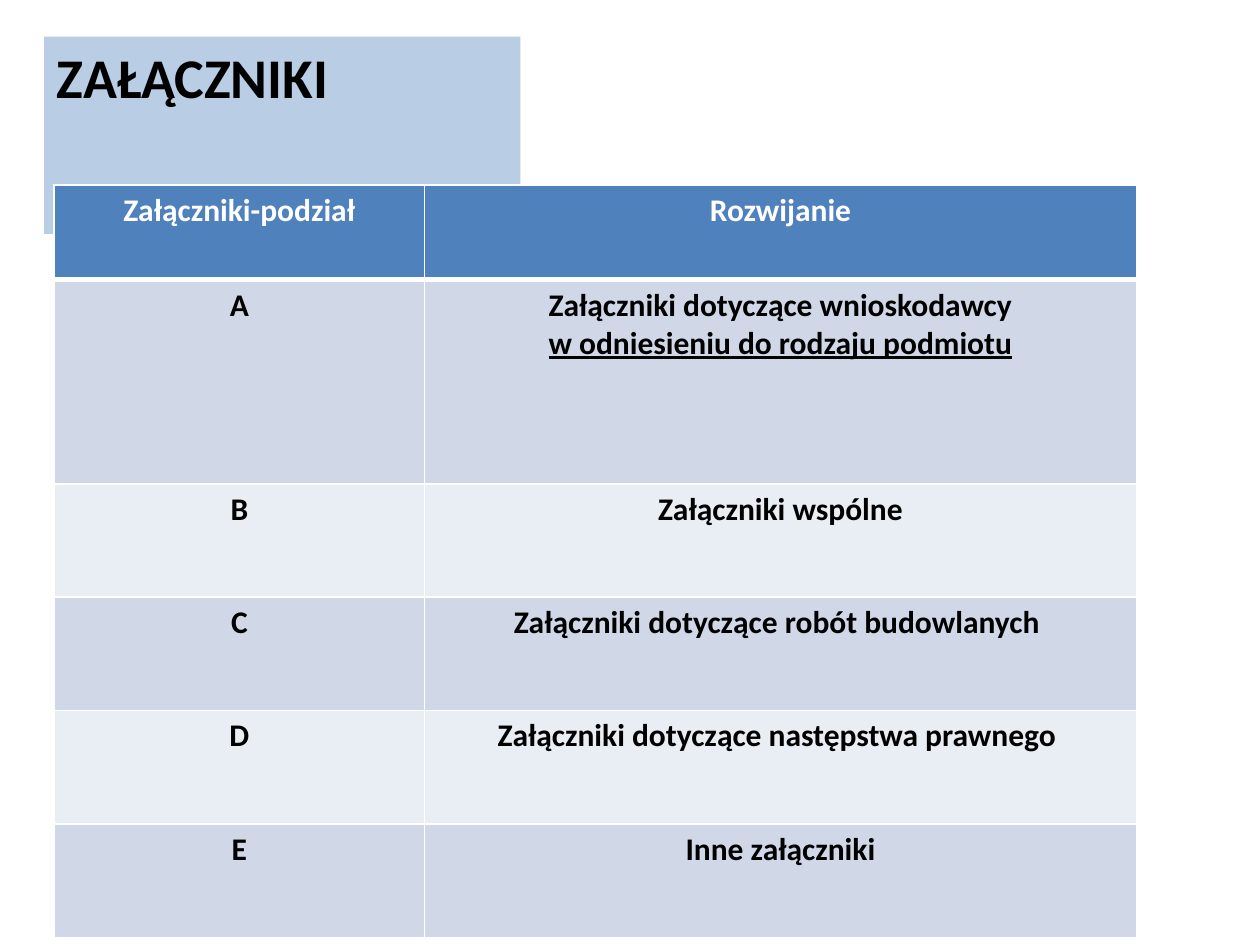
"""Build the slide listing the attachment groups."""
from typing import NamedTuple

import lxml.etree
import pptx
import pptx.dml.color
import pptx.enum.text
import pptx.oxml.ns
import pptx.util
from pptx.util import Inches


class Row(NamedTuple):
    height: float
    label: str
    lines: list[str]
    fill: str
    color: str = "000000"


DARK, LIGHT = "D0D8E8", "E9EDF4"
COLUMNS = [2.94, 5.65]
ROWS = [
    Row(0.75, "Załączniki-podział", ["Rozwijanie"], "4F81BD", "FFFFFF"),
    Row(1.62, "A", ["Załączniki dotyczące wnioskodawcy", "w odniesieniu do rodzaju podmiotu"], DARK),
    Row(0.9, "B", ["Załączniki wspólne"], LIGHT),
    Row(0.9, "C", ["Załączniki dotyczące robót budowlanych "], DARK),
    Row(0.9, "D", ["Załączniki dotyczące następstwa prawnego "], LIGHT),
    Row(0.9, "E", ["Inne załączniki"], DARK),
]


def rgb(color: str) -> pptx.dml.color.RGBColor:
    return pptx.dml.color.RGBColor.from_string(color)


def fill_solid(target, color: str) -> None:
    target.fill.solid()
    target.fill.fore_color.rgb = rgb(color)


def set_font(font, size: float, color: str) -> None:
    font.name = "Calibri"
    font.size = pptx.util.Pt(size)
    font.bold = True
    font.color.rgb = rgb(color)


def add_border(cell, side: str, width: float) -> None:
    qn = pptx.oxml.ns.qn
    tc_pr = cell._tc.get_or_add_tcPr()
    ln = lxml.etree.SubElement(tc_pr, qn(f"a:ln{side}"), w=str(pptx.util.Pt(width)))
    solid = lxml.etree.SubElement(ln, qn("a:solidFill"))
    lxml.etree.SubElement(solid, qn("a:srgbClr"), val="FFFFFF")


def format_cell(cell, lines: list[str], row: Row, index: int) -> None:
    widths = {"L": 1, "R": 1, "T": 3 if index == 1 else 1, "B": 3 if index == 0 else 1}
    for side, width in widths.items():
        add_border(cell, side, width)
    fill_solid(cell, row.fill)
    tf = cell.text_frame
    tf.text = "\n".join(lines)
    for i, p in enumerate(tf.paragraphs):
        p.alignment = pptx.enum.text.PP_ALIGN.CENTER
        set_font(p.font, 18, row.color)
        if i > 0:
            p.font.underline = True


def add_title(s, text: str) -> None:
    sp = s.shapes.title
    sp.left, sp.top, sp.width, sp.height = map(Inches, (0.35, 0.29, 3.78, 0.64))
    fill_solid(sp, "B9CDE5")
    tf = sp.text_frame
    tf.text = text
    tf.word_wrap = True
    tf.auto_size = pptx.enum.text.MSO_AUTO_SIZE.SHAPE_TO_FIT_TEXT
    tf.vertical_anchor = pptx.enum.text.MSO_ANCHOR.TOP
    p = tf.paragraphs[0]
    p.alignment = pptx.enum.text.PP_ALIGN.LEFT
    set_font(p.font, 32, "000000")


def add_attachments(s, rows: list[Row]) -> None:
    height = sum(row.height for row in rows)
    frame = s.shapes.add_table(len(rows), len(COLUMNS), Inches(0.43), Inches(1.47),
                               Inches(sum(COLUMNS)), Inches(height))
    table = frame.table
    for column, width in zip(table.columns, COLUMNS):
        column.width = Inches(width)
    for i, row in enumerate(rows):
        table.rows[i].height = Inches(row.height)
        for j, lines in enumerate(([row.label], row.lines)):
            format_cell(table.cell(i, j), lines, row, i)


def main() -> None:
    prs = pptx.Presentation()
    prs.slide_width, prs.slide_height = Inches(10), Inches(7.5)
    s = prs.slides.add_slide(prs.slide_layouts[5])
    add_title(s, "ZAŁĄCZNIKI")
    add_attachments(s, ROWS)
    prs.save("out.pptx")


if __name__ == "__main__":
    main()
